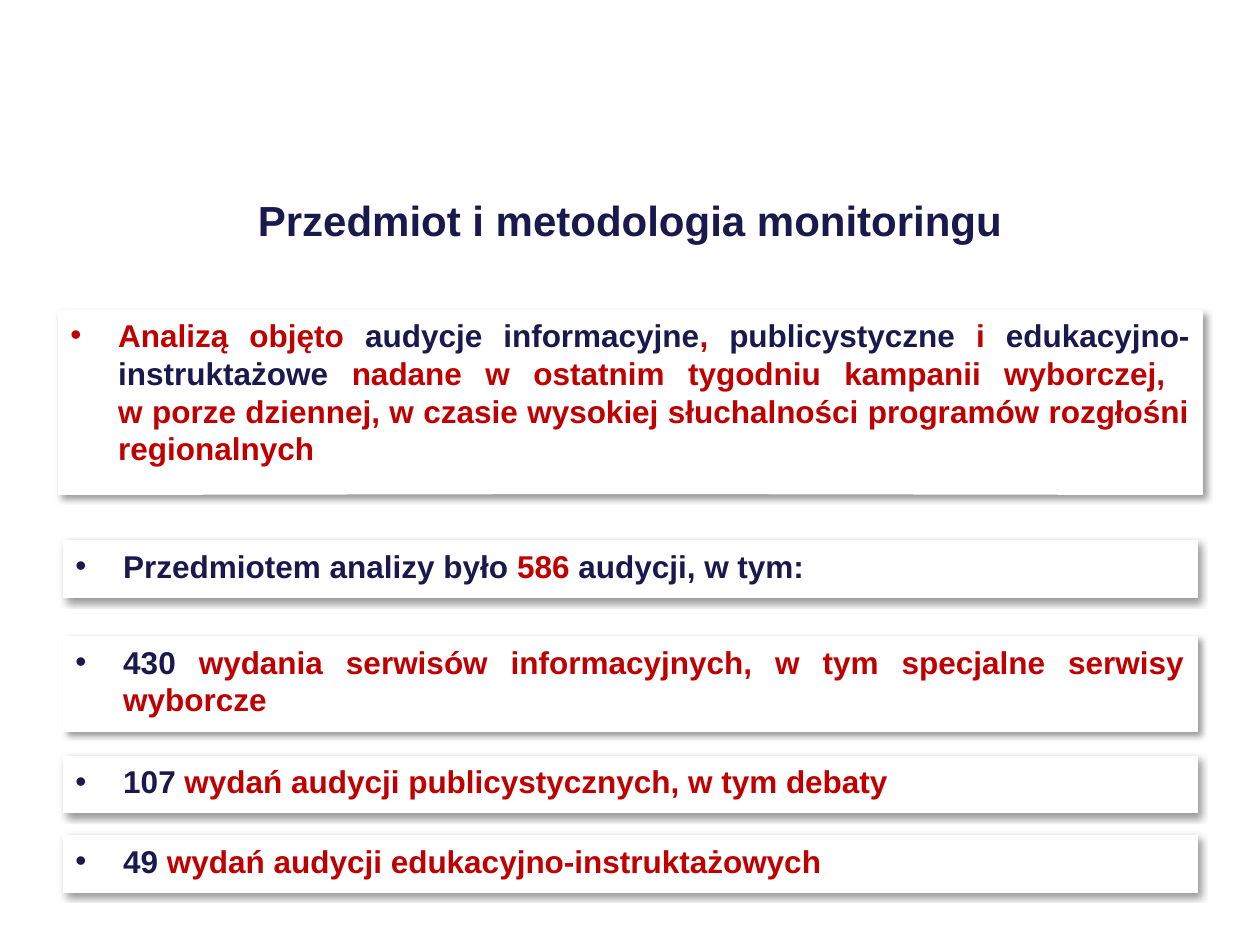
from lxml import etree
from pptx import Presentation
from pptx.dml.color import RGBColor
from pptx.enum.shapes import MSO_SHAPE as Shape
from pptx.enum.text import MSO_ANCHOR as Anchor, PP_ALIGN as Align
from pptx.oxml.ns import qn
from pptx.util import Inches, Pt

COLORS = {"navy": "19194D", "red": "C00000", "white": "FFFFFF", "shadow": "000000"}
INDENT = Inches(0.38)

# Each card: box (left, top, width, height) and its coloured spans
CARDS = [
    ((0.46, 2.46, 9.08, 1.46), [
        ("Analizą objęto ", "red"),
        ("audycje informacyjne", "navy"),
        (", ", "red"),
        ("publicystyczne", "navy"),
        (" i ", "red"),
        ("edukacyjno-instruktażowe", "navy"),
        (" nadane w ostatnim tygodniu kampanii wyborczej, \n"
         "w porze dziennej, w czasie wysokiej słuchalności programów "
         "rozgłośni regionalnych", "red"),
    ]),
    ((0.5, 4.29, 9, 0.45), [
        ("Przedmiotem analizy było ", "navy"),
        ("586", "red"),
        (" audycji, w tym:", "navy"),
    ]),
    ((0.5, 5.05, 9, 0.75), [
        ("430", "navy"),
        (" wydania serwisów informacyjnych, w tym specjalne serwisy wyborcze", "red"),
    ]),
    ((0.5, 6, 9, 0.45), [
        ("107", "navy"),
        (" wydań audycji publicystycznych, w tym debaty", "red"),
    ]),
    ((0.5, 6.63, 9, 0.45), [
        ("49", "navy"),
        (" wydań audycji edukacyjno-instruktażowych", "red"),
    ]),
]


def rgb(name):
    return RGBColor.from_string(COLORS[name])


def add_span(para, text, color, size):
    """Add bold text to a paragraph, with a line break at each newline."""
    for number, line in enumerate(text.split("\n")):
        if number:
            para.add_line_break()
        span = para.add_run()
        span.text = line
        for key, value in {"name": "Arial", "size": Pt(size), "bold": True}.items():
            setattr(span.font, key, value)
        span.font.color.rgb = rgb(color)


def add_shadow(shape):
    """Give a shape a soft shadow to the lower right."""
    shape.shadow.inherit = False
    effects = shape.element.spPr.find(qn("a:effectLst"))
    shadow = etree.SubElement(
        effects, qn("a:outerShdw"), blurRad=str(Pt(4)), dist=str(Pt(3)),
        dir=str(45 * 60000), algn="tl", rotWithShape="0")
    color = etree.SubElement(shadow, qn("a:srgbClr"), val=COLORS["shadow"])
    etree.SubElement(color, qn("a:alpha"), val="40000")


def add_bullet(para):
    """Set a hanging indent with a round bullet."""
    props = para._p.get_or_add_pPr()
    props.set("marL", str(INDENT))
    props.set("indent", str(-INDENT))
    etree.SubElement(props, qn("a:buFont"), typeface="Arial")
    etree.SubElement(props, qn("a:buChar"), char="•")


def place_title(page, box):
    title = page.shapes.title
    title.left, title.top, title.width, title.height = map(Inches, box)
    title.text_frame.vertical_anchor = Anchor.MIDDLE
    para = title.text_frame.paragraphs[0]
    para.alignment = Align.CENTER
    add_span(para, "Przedmiot i metodologia monitoringu", "navy", 24)


def place_card(page, box, spans):
    card = page.shapes.add_shape(Shape.RECTANGLE, *map(Inches, box))
    card.fill.solid()
    card.fill.fore_color.rgb = rgb("white")
    card.line.color.rgb = rgb("white")
    card.line.width = Pt(0.25)
    add_shadow(card)

    frame = card.text_frame
    frame.word_wrap = True
    frame.vertical_anchor = Anchor.TOP
    para = frame.paragraphs[0]
    para.alignment = Align.JUSTIFY
    add_bullet(para)
    for text, color in spans:
        add_span(para, text, color, 18)


def main():
    deck = Presentation()
    deck.slide_width, deck.slide_height = Inches(10), Inches(7.5)
    page = deck.slides.add_slide(deck.slide_layouts[5])
    place_title(page, (0.5, 1.17, 9, 1.15))
    for box, spans in CARDS:
        place_card(page, box, spans)
    deck.save("out.pptx")


if __name__ == "__main__":
    main()
